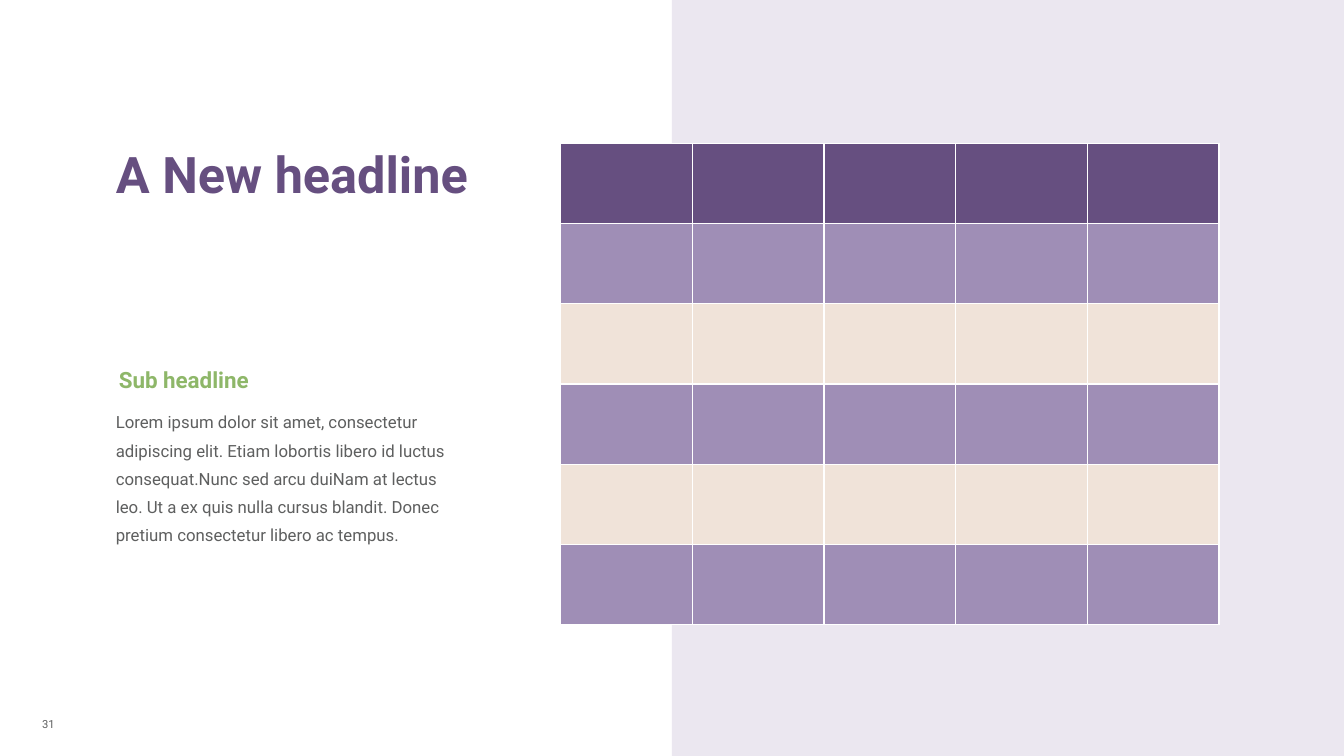
from dataclasses import dataclass

from pptx import Presentation
from pptx.dml.color import RGBColor
from pptx.enum.shapes import MSO_SHAPE
from pptx.util import Inches, Pt

RECTANGLE = MSO_SHAPE.RECTANGLE
SLIDE_WIDTH, SLIDE_HEIGHT = 13.33, 7.5
BODY = (
    "Lorem ipsum dolor sit amet, consectetur adipiscing elit. Etiam lobortis libero id luctus "
    "consequat.Nunc sed arcu duiNam at lectus leo. Ut a ex quis nulla cursus blandit. "
    "Donec pretium consectetur libero ac tempus."
)


@dataclass(frozen=True)
class Theme:
    """Colours, font and type sizes of the slide."""

    font: str = "Roboto"
    purple: str = "664F80"
    lavender: str = "9F8EB6"
    cream: str = "F0E3D9"
    panel: str = "EBE7F0"
    green: str = "8EB769"
    grey: str = "5E5F5F"
    number_grey: str = "5F6060"
    headline_size: int = 36
    subheadline_size: int = 16
    body_size: int = 12
    number_size: int = 8


THEME = Theme()


def paint(fill, colour):
    """Make a fill solid in the given colour."""
    fill.solid()
    fill.fore_color.rgb = RGBColor.from_string(colour)


def add_text(slide, text, box, *, size, colour, bold=False, line_spacing=None, margins=(0.1, 0.05)):
    """Add a wrapped text box with one formatted paragraph."""
    frame = slide.shapes.add_textbox(*map(Inches, box)).text_frame
    frame.word_wrap = True
    frame.margin_left = frame.margin_right = Inches(margins[0])
    frame.margin_top = frame.margin_bottom = Inches(margins[1])
    paragraph = frame.paragraphs[0]
    paragraph.line_spacing = line_spacing
    run = paragraph.add_run()
    run.text = text
    run.font.name = THEME.font
    run.font.size = Pt(size)
    run.font.bold = bold
    run.font.color.rgb = RGBColor.from_string(colour)


def add_panel(slide, box):
    """Fill the box with the pale background panel."""
    panel = slide.shapes.add_shape(RECTANGLE, *map(Inches, box))
    panel.shadow.inherit = False
    paint(panel.fill, THEME.panel)
    panel.line.fill.background()


def add_striped_table(slide, box, row_count=6, column_count=5):
    """Add an empty table with a dark header and alternating rows."""
    left, top, width, height = map(Inches, box)
    table = slide.shapes.add_table(row_count, column_count, left, top, width, height).table
    stripes = (THEME.lavender, THEME.cream)
    for index, row in enumerate(table.rows):
        colour = stripes[(index - 1) % 2] if index else THEME.purple
        for cell in row.cells:
            paint(cell.fill, colour)


def add_copy(slide, box):
    """Place the headline, sub headline and body text in the left column."""
    left, top, width, _ = box
    add_text(slide, BODY, (left, top + 2.54, width, 1.51), size=THEME.body_size,
             colour=THEME.grey, line_spacing=1.4)
    add_text(slide, "A New headline", (left + 0.1, top, width, 0.61), size=THEME.headline_size,
             colour=THEME.purple, bold=True, margins=(0, 0))
    add_text(slide, "Sub headline", (left + 0.03, top + 2.16, 1.75, 0.37),
             size=THEME.subheadline_size, colour=THEME.green, bold=True)


def main():
    """Build and save the slide."""
    presentation = Presentation()
    presentation.slide_width = Inches(SLIDE_WIDTH)
    presentation.slide_height = Inches(SLIDE_HEIGHT)
    slide = presentation.slides.add_slide(presentation.slide_layouts[6])
    paint(slide.background.fill, "FFFFFF")
    add_text(slide, "31", (0.32, 7.07, 1.71, 0.24), size=THEME.number_size,
             colour=THEME.number_grey)
    add_panel(slide, (SLIDE_WIDTH / 2, 0, SLIDE_WIDTH / 2, SLIDE_HEIGHT))
    add_striped_table(slide, (5.56, 1.42, 6.53, 4.78))
    add_copy(slide, (1.05, 1.42, 3.64, 4.05))
    presentation.save("out.pptx")


if __name__ == "__main__":
    main()
